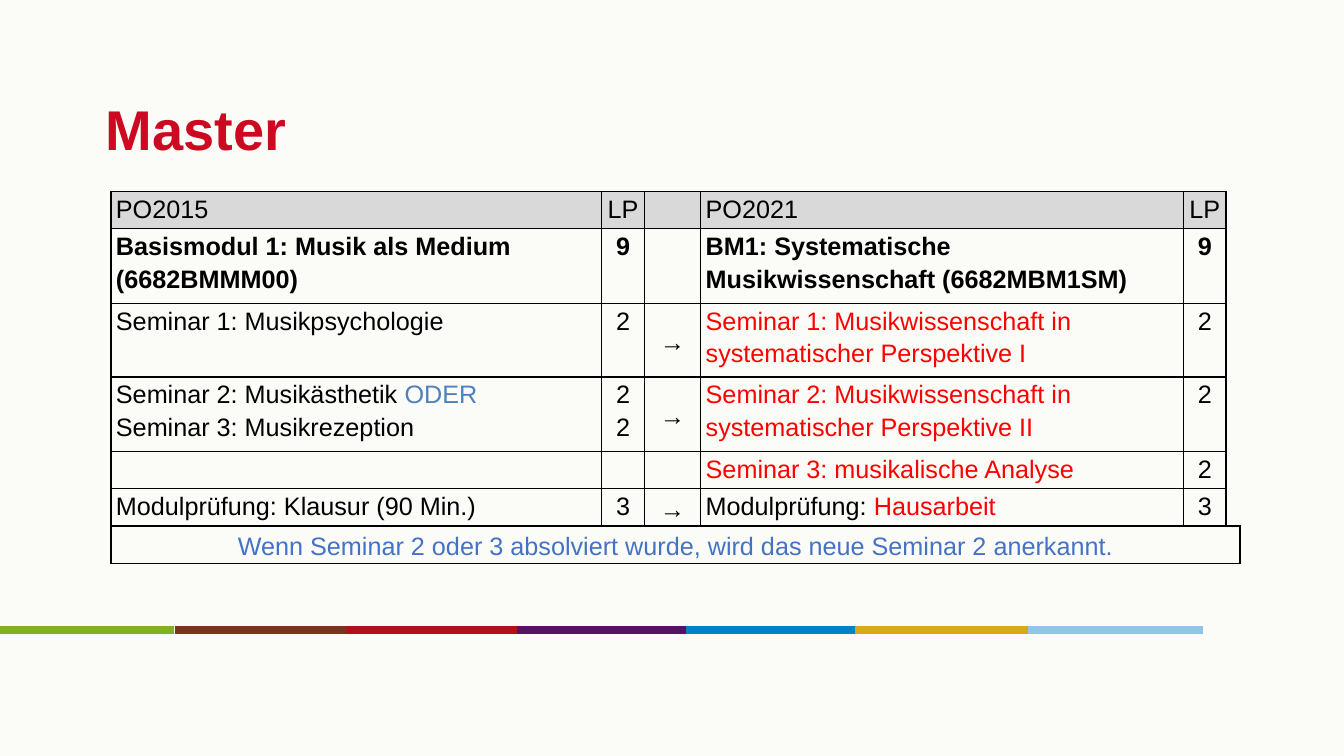
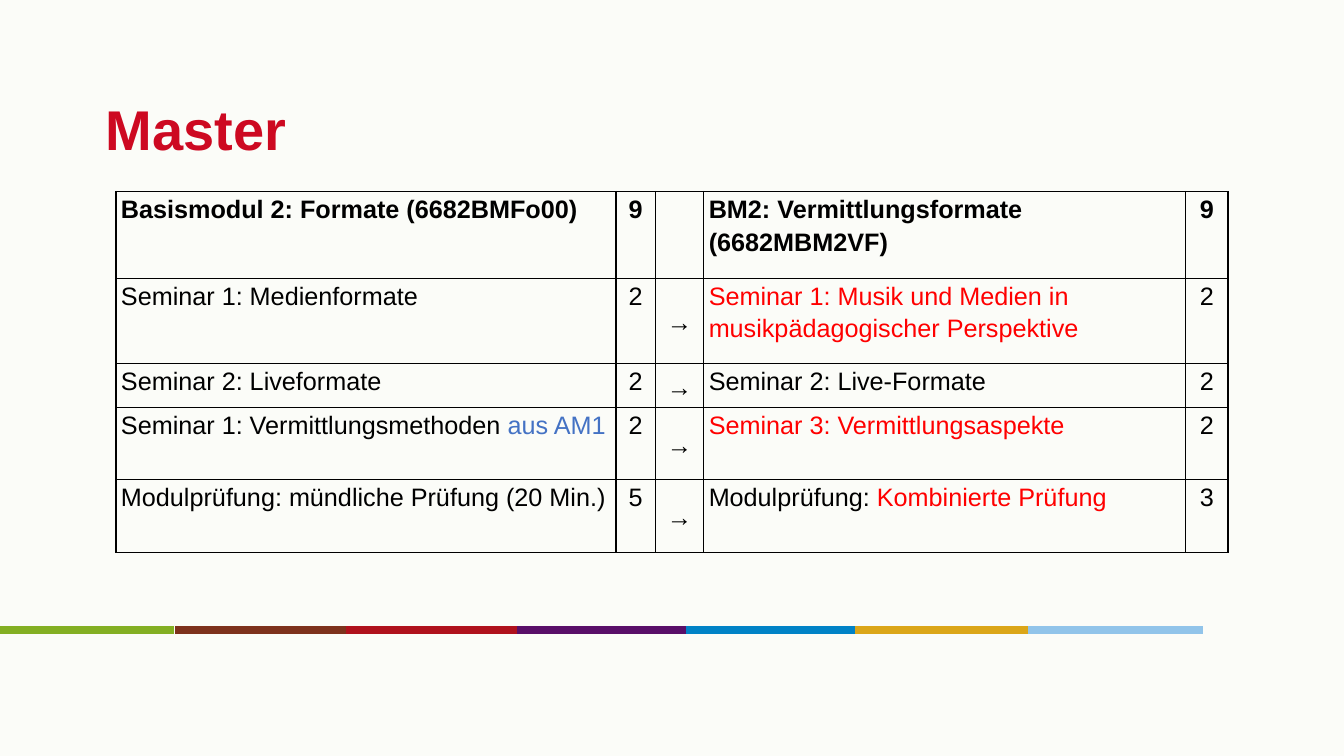
from lxml.etree import SubElement
from pptx import Presentation
from pptx.dml.color import RGBColor
from pptx.enum.shapes import MSO_CONNECTOR as Connector
from pptx.enum.text import MSO_ANCHOR as Anchor, PP_ALIGN as Align
from pptx.oxml.ns import qn
from pptx.util import Inches, Pt

COLORS = {
    "background": "FBFCF8",
    "title": "CD0921",
    "text": "000000",
    "border": "000000",
    "header": "D9D9D9",
    "changed": "FF0000",
    "option": "4F81BD",
    "note": "4472C4",
}
BAND_COLORS = ["83AF23", "7D321D", "AF111D", "590F68", "0082C6", "DBA619", "91C4EA"]
BAND_STARTS = [0, 1.74, 3.43, 5.13, 6.8, 8.48, 10.2]
BAND_LENGTH, BAND_TOP = 1.73, 6.25
TABLE_TOP = 1.9

FONT = "Arial"
TITLE_FONT = {"name": FONT, "size": Pt(40), "bold": True}
CELL_FONT = {"name": FONT, "size": Pt(18)}
CELL_PARAGRAPH = {"line_spacing": 1.15, "space_after": Pt(10)}
CELL_MARGINS = {
    "margin_left": Inches(0.05),
    "margin_right": Inches(0.05),
    "margin_top": 0,
    "margin_bottom": 0,
}
TITLE_FRAME = {
    **dict.fromkeys(
        ("margin_left", "margin_right", "margin_top", "margin_bottom"), Inches(0.05)
    ),
    "vertical_anchor": Anchor.MIDDLE,
    "word_wrap": True,
}
ALL_SIDES = "LRTB"
ARROW = "→"
ARROW_COLUMN = 2
CENTERED_COLUMNS = {1, ARROW_COLUMN, 4}
SPARE_COLUMN = 5

# A cell is a text or a list of runs; a run is a text or a (text, colour) pair.
MODULE_1 = {
    "left": 1.1,
    "columns": [4.87, 0.42, 0.56, 4.79, 0.42, 0.08],
    "heights": [0.37, 0.74, 0.73, 0.74, 0.37, 0.37, 0.37],
    "header_row": 0,
    "bold_row": 1,
    "rows": [
        ["PO2015", "LP", "", "PO2021", "LP"],
        ["Basismodul 1: Musik als Medium (6682BMMM00)", "9", "",
         "BM1: Systematische Musikwissenschaft (6682MBM1SM)", "9"],
        ["Seminar 1: Musikpsychologie", "2", ARROW,
         [("Seminar 1: Musikwissenschaft in systematischer Perspektive I", "changed")], "2"],
        [["Seminar 2: Musikästhetik ", ("ODER\n", "option"), "Seminar 3: Musikrezeption"],
         "2\n2", ARROW,
         [("Seminar 2: Musikwissenschaft in systematischer Perspektive II", "changed")], "2"],
        ["", "", "", [("Seminar 3: musikalische Analyse", "changed")], "2"],
        ["Modulprüfung: Klausur (90 Min.)", "3", ARROW,
         ["Modulprüfung: ", ("Hausarbeit", "changed")], "3"],
    ],
    "note": "Wenn Seminar 2 oder 3 absolviert wurde, wird das neue Seminar 2 anerkannt.",
}
MODULE_2 = {
    "left": 1.15,
    "columns": [4.96, 0.39, 0.48, 4.78, 0.42],
    "heights": [0.86, 0.85, 0.43, 0.72, 0.72],
    "header_row": None,
    "bold_row": 0,
    "rows": [
        ["Basismodul 2: Formate (6682BMFo00)", "9", "",
         "BM2: Vermittlungsformate (6682MBM2VF)", "9"],
        ["Seminar 1: Medienformate", "2", ARROW,
         [("Seminar 1: Musik und Medien in musikpädagogischer Perspektive", "changed")], "2"],
        ["Seminar 2: Liveformate", "2", ARROW, "Seminar 2: Live-Formate", "2"],
        [["Seminar 1: Vermittlungsmethoden ", ("aus AM1", "note")], "2", ARROW,
         [("Seminar 3: Vermittlungsaspekte", "changed")], "2"],
        ["Modulprüfung: mündliche Prüfung (20 Min.)", "5", ARROW,
         ["Modulprüfung: ", ("Kombinierte Prüfung", "changed")], "3"],
    ],
    "note": None,
}


def apply_format(target, values):
    for name, value in values.items():
        setattr(target, name, value)


def rgb(name):
    return RGBColor.from_string(COLORS[name])


def add_run(paragraph, text, color, font):
    """Add text in one format; a newline becomes a line break."""
    for index, line in enumerate(text.split("\n")):
        if index:
            paragraph.add_line_break()
        if line:
            run = paragraph.add_run()
            run.text = line
            apply_format(run.font, font)
            run.font.color.rgb = rgb(color)


def add_title(slide, text):
    box = slide.shapes.add_textbox(Inches(1), Inches(0.65), Inches(11.33), Inches(1.25))
    apply_format(box.text_frame, TITLE_FRAME)
    add_run(box.text_frame.paragraphs[0], text, "title", TITLE_FONT)


def add_color_band(slide):
    top = Inches(BAND_TOP)
    for start, color in zip(BAND_STARTS, BAND_COLORS):
        line = slide.shapes.add_connector(
            Connector.STRAIGHT, Inches(start), top, Inches(start + BAND_LENGTH), top
        )
        line.line.color.rgb = RGBColor.from_string(color)
        line.line.width = Pt(5.5)
        SubElement(line._element.spPr, qn("a:effectLst"))


def set_borders(cell, visible_sides):
    properties = cell._tc.get_or_add_tcPr()
    for side in ALL_SIDES:
        line = SubElement(properties, qn(f"a:ln{side}"), w=str(Pt(1)))
        if side in visible_sides:
            fill = SubElement(line, qn("a:solidFill"))
            SubElement(fill, qn("a:srgbClr"), val=COLORS["border"])
        else:
            SubElement(line, qn("a:noFill"))


def style_cell(cell, fill=None, visible_sides=ALL_SIDES):
    apply_format(cell, CELL_MARGINS)
    set_borders(cell, visible_sides)
    if fill:
        cell.fill.solid()
        cell.fill.fore_color.rgb = rgb(fill)
    else:
        cell.fill.background()


def write_cell(cell, content, centered=False, middle=False, bold=False):
    paragraph = cell.text_frame.paragraphs[0]
    apply_format(paragraph, CELL_PARAGRAPH)
    paragraph.alignment = Align.CENTER if centered else Align.LEFT
    cell.vertical_anchor = Anchor.MIDDLE if middle else Anchor.TOP
    for run in [content] if isinstance(content, str) else content:
        text, color = (run, "text") if isinstance(run, str) else run
        add_run(paragraph, text, color, {**CELL_FONT, "bold": bold})


def add_note_row(table, text):
    last_row = len(table.rows) - 1
    cell = table.cell(last_row, 0)
    cell.merge(table.cell(last_row, len(table.columns) - 1))
    write_cell(cell, [(text, "note")], centered=True, middle=True)


def add_module_table(slide, module):
    columns, heights = module["columns"], module["heights"]
    table = slide.shapes.add_table(
        len(heights), len(columns), Inches(module["left"]), Inches(TABLE_TOP),
        Inches(sum(columns)), Inches(sum(heights)),
    ).table
    apply_format(table, {"first_row": False, "horz_banding": False})
    for column, width in zip(table.columns, columns):
        column.width = Inches(width)
    for row, height in zip(table.rows, heights):
        row.height = Inches(height)

    content_rows = len(module["rows"])
    for row_index, row in enumerate(table.rows):
        for column_index, cell in enumerate(row.cells):
            if column_index == SPARE_COLUMN and row_index < content_rows:
                style_cell(cell, visible_sides="LB" if row_index == content_rows - 1 else "L")
            else:
                style_cell(cell, "header" if row_index == module["header_row"] else None)
    for row_index, contents in enumerate(module["rows"]):
        for column_index, content in enumerate(contents):
            if content:
                write_cell(
                    table.cell(row_index, column_index), content,
                    centered=column_index in CENTERED_COLUMNS,
                    middle=column_index == ARROW_COLUMN,
                    bold=row_index == module["bold_row"],
                )
    if module["note"]:
        add_note_row(table, module["note"])


def main():
    presentation = Presentation()
    presentation.slide_width = Inches(13.33)
    presentation.slide_height = Inches(7.5)
    background = presentation.slide_master.background.fill
    background.solid()
    background.fore_color.rgb = rgb("background")
    for module in (MODULE_1, MODULE_2):
        slide = presentation.slides.add_slide(presentation.slide_layouts[6])
        add_color_band(slide)
        add_title(slide, "Master")
        add_module_table(slide, module)
    presentation.save("out.pptx")


if __name__ == "__main__":
    main()
